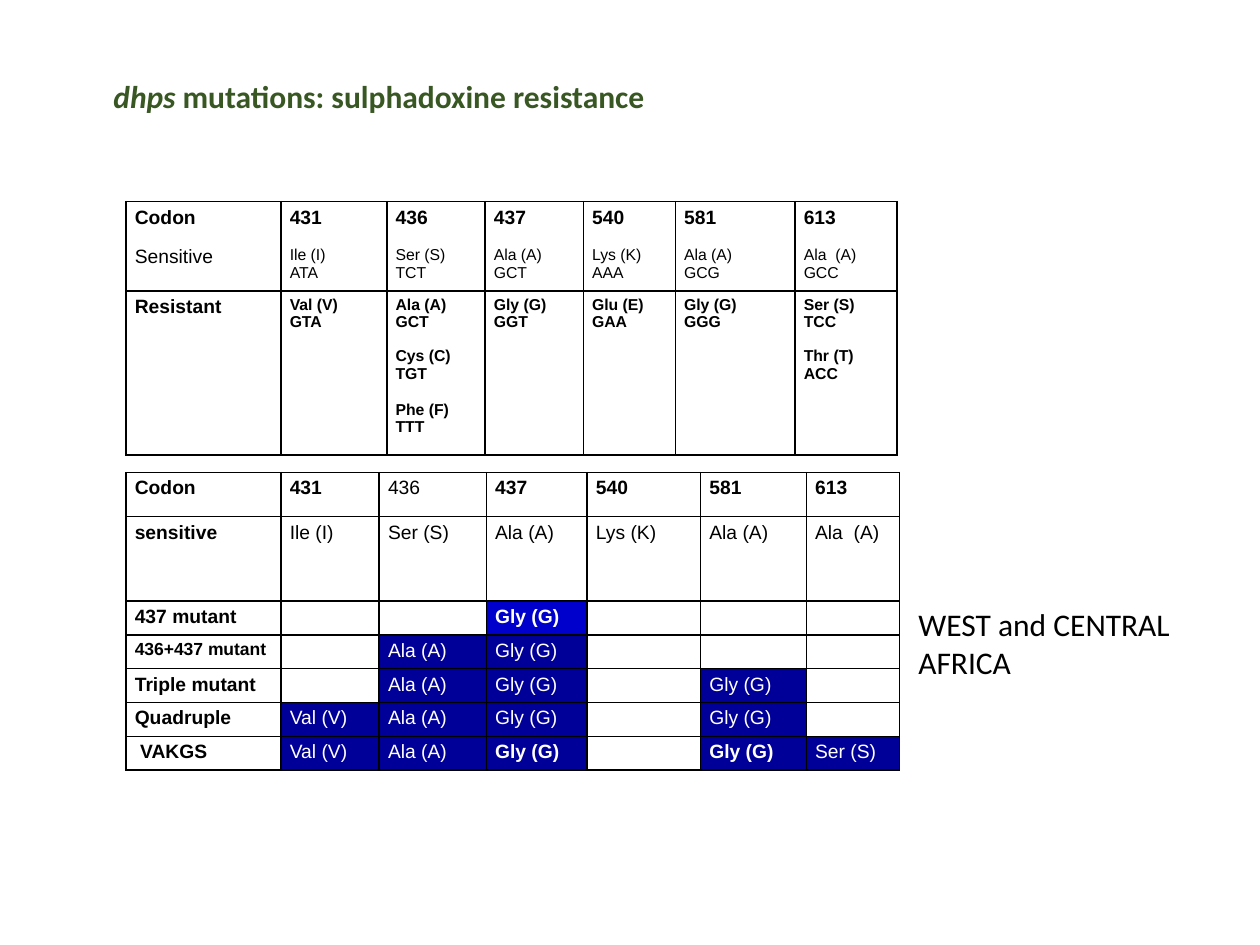
from lxml import etree
from pptx import Presentation
from pptx import util as u
from pptx.dml.color import RGBColor
from pptx.enum import text as t
from pptx.oxml import ns

BLACK, WHITE, GREEN = "000000", "FFFFFF", "385723"
NAVY, BLUE = "000099", "0000CC"

codons = {
    "top": 1.6,
    "cols": [1.23, 0.84, 0.78, 0.78, 0.73, 0.95, 0.81],
    "rows": [0.71, 1.3],
    "cells": [
        ["Codon\n\nSensitive", "431\n\nIle (I)\nATA", "436\n\nSer (S)\nTCT",
         "437\n\nAla (A)\nGCT", "540\n\nLys (K)\nAAA", "581\n\nAla (A)\nGCG",
         "613\n\nAla  (A)\nGCC"],
        ["Resistant", "Val (V)\nGTA",
         "Ala (A)\nGCT\n\nCys (C)\nTGT\n\nPhe (F)\nTTT",
         "Gly (G)\nGGT", "Glu (E)\nGAA", "Gly (G)\nGGG",
         "Ser (S)\nTCC\n\nThr (T)\nACC"],
    ],
}
mutants = {
    "top": 3.75,
    "cols": [1.23, 0.78, 0.85, 0.8, 0.9, 0.84, 0.74],
    "rows": [0.35, 0.67] + [0.26] * 5,
    "cells": [
        ["Codon", "431", "436", "437", "540", "581", "613"],
        ["sensitive", "Ile (I)", "Ser (S)", "Ala (A)", "Lys (K)", "Ala (A)", "Ala  (A)"],
        ["437 mutant", "", "", "Gly (G)", "", "", ""],
        ["436+437 mutant", "", "Ala (A)", "Gly (G)", "", "", ""],
        ["Triple mutant", "", "Ala (A)", "Gly (G)", "", "Gly (G)", ""],
        ["Quadruple", "Val (V)", "Ala (A)", "Gly (G)", "", "Gly (G)", ""],
        [" VAKGS", "Val (V)", "Ala (A)", "Gly (G)", "", "Gly (G)", "Ser (S)"],
    ],
}
bold_genes = {(2, 3), (6, 3), (6, 5)}


def color(code):
    return RGBColor.from_string(code)


def style(para, size, bold=False, code=BLACK, face="Arial"):
    for run in para.runs:
        font = run.font
        font.name, font.size, font.bold = face, u.Pt(size), bold
        font.color.rgb = color(code)


def border(cell):
    props = cell._tc.get_or_add_tcPr()
    for i, side in enumerate(("lnL", "lnR", "lnT", "lnB")):
        line = etree.Element(ns.qn("a:" + side), w=str(u.Pt(1)))
        fill = etree.SubElement(line, ns.qn("a:solidFill"))
        etree.SubElement(fill, ns.qn("a:srgbClr"), val=BLACK)
        props.insert(i, line)


def codon_look(row, col, block):
    size = 11 if col == 0 or (row == 0 and block == 0) else 9
    return size, row == 1 or block == 0, BLACK, WHITE


def mutant_look(row, col, block):
    size = 10 if (row, col) == (3, 0) else 11
    if row > 1 and col > 0:
        fill = BLUE if row == 2 else NAVY
        return size, (row, col) in bold_genes, WHITE, fill
    return size, col == 0 or (row == 0 and col != 2), BLACK, WHITE


def fill_cell(cell, words, row, col, look):
    cell.margin_left = cell.margin_right = u.Inches(0.07)
    cell.margin_top = cell.margin_bottom = u.Inches(0.04)
    cell.fill.solid()
    cell.fill.fore_color.rgb = color(look(row, col, 0)[3] if words else WHITE)
    border(cell)
    frame = cell.text_frame
    if not words:
        frame.paragraphs[0]._p.get_or_add_endParaRPr().set("sz", "1100")
        return
    blocks = [block.split("\n") for block in words.split("\n\n")]
    frame.text = "\n".join(line for block in blocks for line in block)
    paras = iter(frame.paragraphs)
    for b, block in enumerate(blocks):
        for i, line in enumerate(block):
            para = next(paras)
            style(para, *look(row, col, b)[:3])
            if b and i == 0:
                para.space_before = u.Pt(9.2 if row == 1 and b == 1 else 10.35)


def add_grid(slide, data, look):
    cols, rows = data["cols"], data["rows"]
    table = slide.shapes.add_table(
        len(rows), len(cols), u.Inches(1), u.Inches(data["top"]),
        u.Inches(sum(cols)), u.Inches(sum(rows))).table
    for col, width in zip(table.columns, cols):
        col.width = u.Inches(width)
    for row, height in zip(table.rows, rows):
        row.height = u.Inches(height)
    for r, line in enumerate(data["cells"]):
        for c, words in enumerate(line):
            fill_cell(table.cell(r, c), words, r, c, look)


def place(shape, *box):
    shape.left, shape.top, shape.width, shape.height = map(u.Inches, box)


def main():
    deck = Presentation()
    deck.slide_width, deck.slide_height = u.Inches(10), u.Inches(7.5)
    slide = deck.slides.add_slide(deck.slide_layouts[5])

    title = slide.shapes.title
    place(title, 0.8, 0.56, 5.18, 0.4)
    frame = title.text_frame
    frame.text = "dhps"
    frame.vertical_anchor = t.MSO_ANCHOR.TOP
    frame.auto_size = t.MSO_AUTO_SIZE.NONE
    para = frame.paragraphs[0]
    para.alignment = t.PP_ALIGN.LEFT
    para.add_run().text = " mutations: sulphadoxine resistance"
    style(para, 18, True, GREEN, "Calibri")
    para.runs[0].font.italic = True

    add_grid(slide, codons, codon_look)
    add_grid(slide, mutants, mutant_look)

    note = slide.shapes.add_textbox(*map(u.Inches, (7.19, 4.75, 2.76, 0.71)))
    note.text_frame.word_wrap = True
    note.text_frame.text = "WEST and CENTRAL\nAFRICA"
    for para in note.text_frame.paragraphs:
        style(para, 18, face="Calibri")

    deck.save("out.pptx")


if __name__ == "__main__":
    main()
